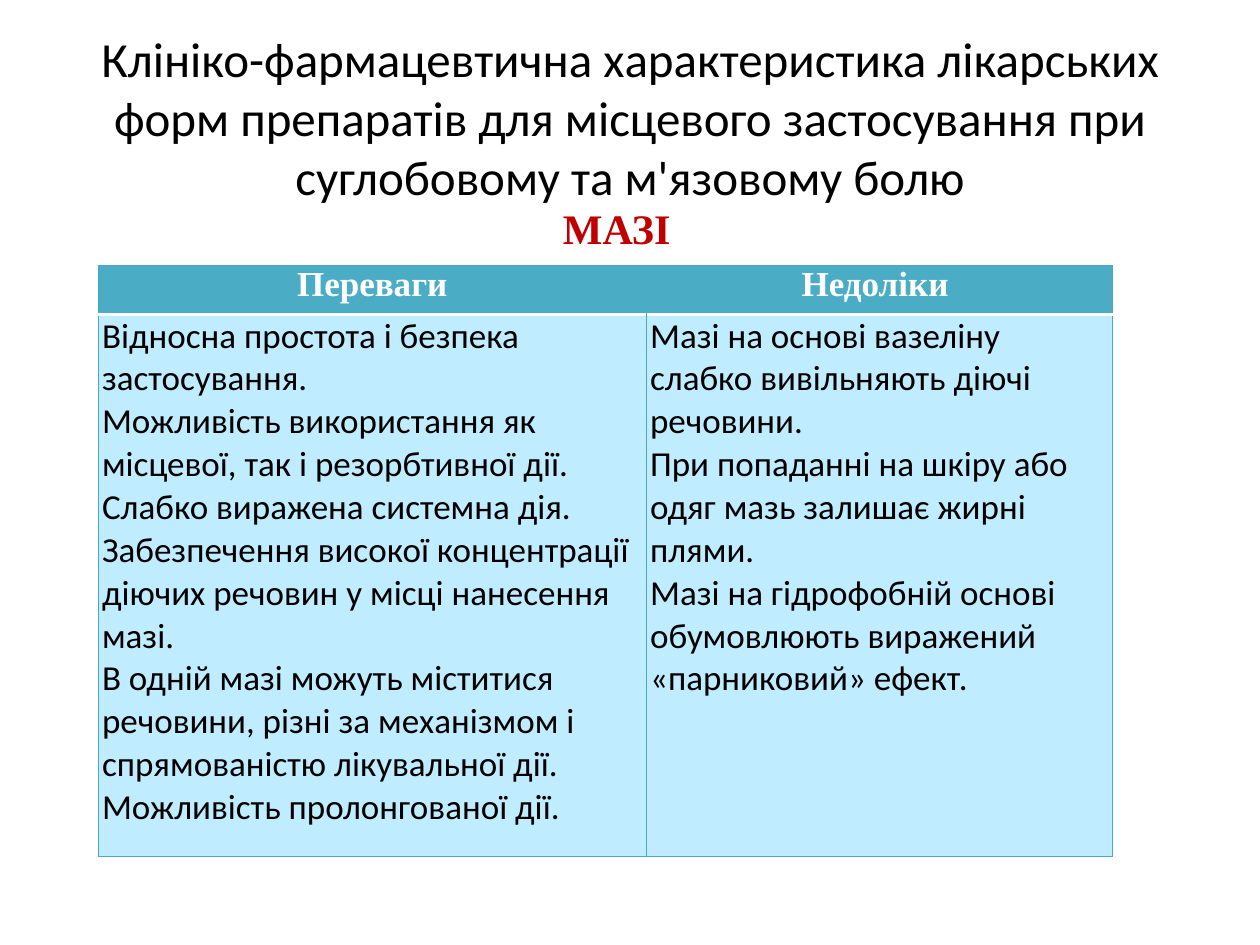
import pptx
import pptx.dml.color
import pptx.enum.text
import pptx.oxml
import pptx.oxml.ns
import pptx.util

WIDTH, HEIGHT = 10, 7.5
COLUMNS = [4.35, 3.7]
ROWS = [0.39, 4.3]
CENTER = pptx.enum.text.PP_ALIGN.CENTER
LEFT = pptx.enum.text.PP_ALIGN.LEFT
MIDDLE = pptx.enum.text.MSO_ANCHOR.MIDDLE

TITLE = {"name": "Calibri", "size": pptx.util.Pt(28), "bold": False}
SUBTITLE = {"name": "Times New Roman", "size": pptx.util.Pt(24), "bold": True}
HEADER = {"name": "Times New Roman", "size": pptx.util.Pt(20), "bold": True}
BODY = {"name": "Calibri", "size": pptx.util.Pt(20), "bold": False}

TEAL_LINE = ("46AAC5", 0.75)
WHITE_LINE = ("FFFFFF", 2)
HEADINGS = ["Переваги", "Недоліки "]
ADVANTAGES = [
    "Відносна простота і безпека застосування.",
    "Можливість використання як місцевої, так і резорбтивної дії. "
    "Слабко виражена системна дія. Забезпечення високої концентрації "
    "діючих речовин у місці нанесення мазі.",
    "В одній мазі можуть міститися речовини, різні за механізмом і "
    "спрямованістю лікувальної дії. Можливість пролонгованої дії.",
]
DRAWBACKS = [
    "Мазі на основі вазеліну слабко вивільняють діючі речовини.",
    "При попаданні на шкіру або одяг мазь залишає жирні плями.",
    "Мазі на гідрофобній основі обумовлюють виражений «парниковий» ефект.",
]


def color(value):
    return pptx.dml.color.RGBColor.from_string(value)


def write(frame, texts, font_format, font_color, alignment):
    for index, text in enumerate(texts):
        paragraph = frame.add_paragraph() if index else frame.paragraphs[0]
        paragraph.alignment = alignment
        run = paragraph.add_run()
        run.text = text
        for name, value in font_format.items():
            setattr(run.font, name, value)
        run.font.color.rgb = color(font_color)


def add_text(slide, box, text, font_format, font_color, alignment, frame_format):
    """Add a text box; box holds shares of the slide's size."""
    left, top, width, height = box
    shape = slide.shapes.add_textbox(
        pptx.util.Inches(left * WIDTH), pptx.util.Inches(top * HEIGHT),
        pptx.util.Inches(width * WIDTH), pptx.util.Inches(height * HEIGHT))
    for name, value in frame_format.items():
        setattr(shape.text_frame, name, value)
    write(shape.text_frame, [text], font_format, font_color, alignment)


def set_borders(cell, borders):
    """Draw the four sides in the order L, R, T, B; None leaves a side bare."""
    properties = cell._tc.get_or_add_tcPr()
    for side, border in zip("LRTB", borders):
        fill, width = "<a:noFill/>", 0
        if border:
            fill = f'<a:solidFill><a:srgbClr val="{border[0]}"/></a:solidFill>'
            width = pptx.util.Pt(border[1])
        properties.append(pptx.oxml.parse_xml(
            f'<a:ln{side} {pptx.oxml.ns.nsdecls("a")} w="{width}">{fill}</a:ln{side}>'))


def fill_cell(cell, texts, font_format, font_color, alignment, background, borders):
    margins = {"margin_left": 0.03, "margin_right": 0.03,
               "margin_top": 0, "margin_bottom": 0}
    for name, value in margins.items():
        setattr(cell, name, pptx.util.Inches(value))
    set_borders(cell, borders)
    cell.fill.solid()
    cell.fill.fore_color.rgb = color(background)
    write(cell.text_frame, texts, font_format, font_color, alignment)


def add_comparison(slide, left, top):
    table = slide.shapes.add_table(
        len(ROWS), len(COLUMNS),
        pptx.util.Inches(left * WIDTH), pptx.util.Inches(top * HEIGHT),
        pptx.util.Inches(sum(COLUMNS)), pptx.util.Inches(sum(ROWS))).table
    table.horz_banding = False
    for column, width in zip(table.columns, COLUMNS):
        column.width = pptx.util.Inches(width)
    for row, height in zip(table.rows, ROWS):
        row.height = pptx.util.Inches(height)

    outer_sides = [(TEAL_LINE, None), (None, TEAL_LINE)]
    for index, (heading, points) in enumerate(zip(HEADINGS, [ADVANTAGES, DRAWBACKS])):
        fill_cell(table.cell(0, index), [heading], HEADER, "FFFFFF", CENTER,
                  "4BACC6", [*outer_sides[index], TEAL_LINE, WHITE_LINE])
        fill_cell(table.cell(1, index), points, BODY, "000000", LEFT,
                  "BFECFF", [TEAL_LINE, TEAL_LINE, WHITE_LINE, TEAL_LINE])


def main():
    presentation = pptx.Presentation()
    presentation.slide_width = pptx.util.Inches(WIDTH)
    presentation.slide_height = pptx.util.Inches(HEIGHT)
    slide = presentation.slides.add_slide(presentation.slide_layouts[6])

    # Title
    add_text(slide, (0.05, 0.04, 0.9, 0.167),
             "Клініко-фармацевтична характеристика лікарських форм препаратів "
             "для місцевого застосування при суглобовому та м'язовому болю",
             TITLE, "000000", CENTER,
             {"word_wrap": True, "vertical_anchor": MIDDLE})

    # Table of advantages and drawbacks
    add_comparison(slide, 0.078, 0.281)

    # Dosage form name
    add_text(slide, (0.437, 0.208, 0.106, 0.067), "МАЗІ", SUBTITLE, "C00000", LEFT,
             {"word_wrap": False,
              "auto_size": pptx.enum.text.MSO_AUTO_SIZE.SHAPE_TO_FIT_TEXT})

    presentation.save("out.pptx")


if __name__ == "__main__":
    main()
